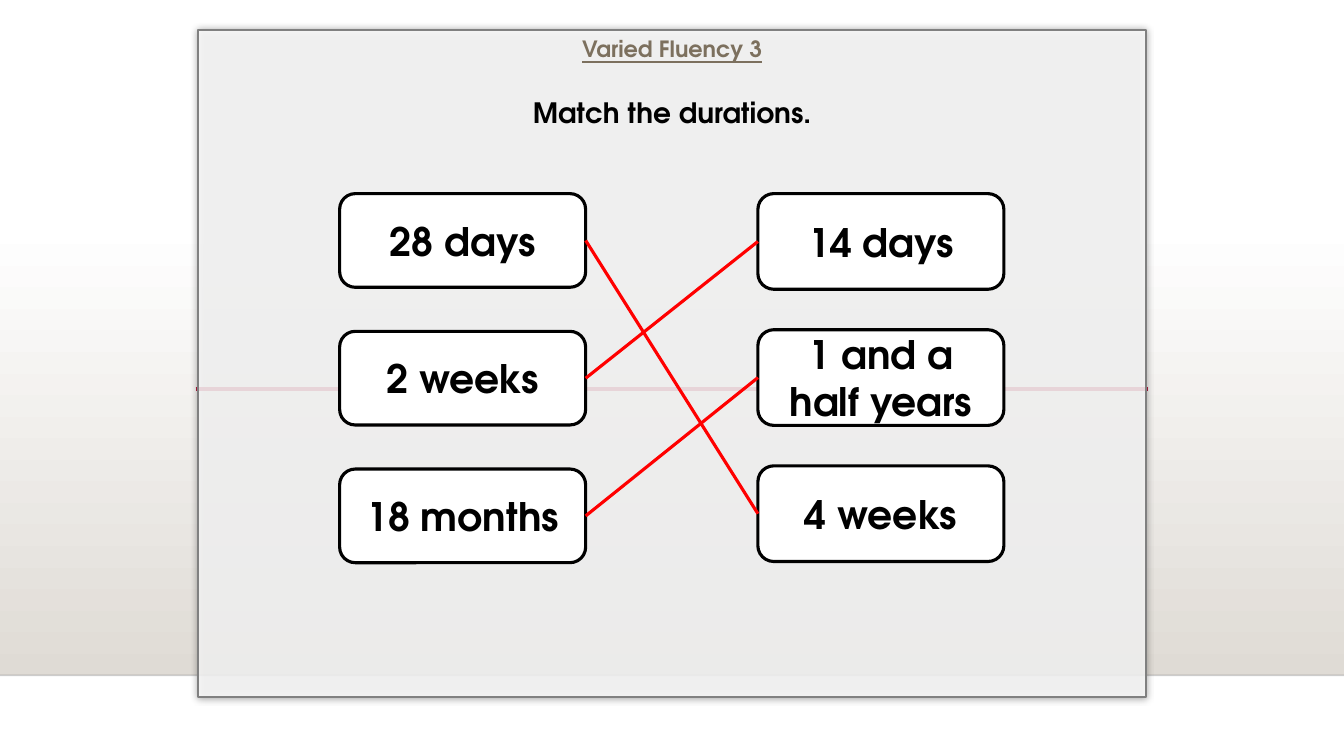
import dataclasses

import lxml.etree
import pptx
import pptx.dml.color
import pptx.enum.shapes
import pptx.enum.text
import pptx.oxml.ns
import pptx.util

Cm = pptx.util.Cm
Pt = pptx.util.Pt
qn = pptx.oxml.ns.qn
SHAPES = pptx.enum.shapes.MSO_SHAPE
MIDDLE = pptx.enum.text.MSO_ANCHOR.MIDDLE
CENTER = pptx.enum.text.PP_ALIGN.CENTER

COLORS = {
    "floor": "DFDBD5", "edge": "000001", "rule": "B71E42", "panel line": "808080",
    "title": "7C705E", "black": "000000", "white": "FFFFFF", "answer": "FF0000",
}
FONT = "TeX Gyre Adventor"
SLIDE_WIDTH, SLIDE_HEIGHT = 33.87, 19.05
PANEL_LEFT, PANEL_TOP, PANEL_WIDTH, PANEL_HEIGHT = 5.0, 0.76, 23.88, 16.81
CARD_WIDTH = 6.2
CARD_TOP = 4.88


@dataclasses.dataclass
class Column:
    left: float
    height: float
    pitch: float
    labels: list[str]


@dataclasses.dataclass
class Rule:
    left: float
    right: float
    y: float
    color: str
    width: float
    alpha: int


DURATIONS = Column(8.56, 2.36, 3.47, ["28 days", "2 weeks", "18 months"])
ANSWERS = Column(19.1, 2.41, 3.43, ["14 days", "1 and a half years", "4 weeks"])
MATCHES = {"28 days": "4 weeks", "2 weeks": "14 days", "18 months": "1 and a half years"}
RULES = [
    Rule(0, SLIDE_WIDTH, 17.02, "edge", 1, 20),
    Rule(4.93, 28.93, 9.8, "rule", 2.5, 100),
]


def rgb(name: str) -> pptx.dml.color.RGBColor:
    return pptx.dml.color.RGBColor.from_string(COLORS[name])


def set_alpha(color_element, percent: int) -> None:
    lxml.etree.SubElement(color_element, qn("a:alpha"), val=str(percent * 1000))


def add_box(page, kind, left: float, top: float, width: float, height: float):
    box = page.shapes.add_shape(kind, Cm(left), Cm(top), Cm(width), Cm(height))
    box.shadow.inherit = False
    return box


def style_box(box, line: str, width: float) -> None:
    box.fill.solid()
    box.fill.fore_color.rgb = rgb("white")
    box.line.color.rgb = rgb(line)
    box.line.width = Pt(width)


def add_line(page, left: float, right: float, y: float, color: str, width: float):
    line = page.shapes.add_connector(
        pptx.enum.shapes.MSO_CONNECTOR.STRAIGHT, Cm(left), Cm(y), Cm(right), Cm(y))
    line.line.color.rgb = rgb(color)
    line.line.width = Pt(width)
    lxml.etree.SubElement(line.element.spPr, qn("a:effectLst"))
    return line


def write(box, text: str, size: float, color: str, underline: bool = False) -> None:
    frame = box.text_frame
    frame.word_wrap = True
    frame.auto_size = pptx.enum.text.MSO_AUTO_SIZE.NONE
    frame.vertical_anchor = MIDDLE
    para = frame.paragraphs[0]
    para.alignment = CENTER
    para.space_before = Pt(0)
    span = para.add_run()
    span.text = text
    formats = {"name": FONT, "size": Pt(size), "bold": True, "underline": underline}
    for name, value in formats.items():
        setattr(span.font, name, value)
    span.font.color.rgb = rgb(color)


def draw_backdrop(page) -> None:
    # Shaded floor
    floor = add_box(page, SHAPES.RECTANGLE, 0, 5.61, SLIDE_WIDTH, 11.41)
    floor.line.fill.background()
    floor.fill.gradient()
    floor.fill.gradient_angle = 270
    for stop, color, position in zip(floor.fill.gradient_stops, ("white", "floor"), (0, 1)):
        stop.color.rgb = rgb(color)
        stop.position = position

    # Horizontal rules
    for rule in RULES:
        line = add_line(page, rule.left, rule.right, rule.y, rule.color, rule.width)
        if rule.alpha < 100:
            set_alpha(line.element.spPr.find(".//" + qn("a:srgbClr")), rule.alpha)

    # Translucent panel with a soft shadow
    panel = add_box(page, SHAPES.RECTANGLE, PANEL_LEFT, PANEL_TOP, PANEL_WIDTH, PANEL_HEIGHT)
    style_box(panel, "panel line", 1.25)
    properties = panel.element.spPr
    set_alpha(properties.find(qn("a:solidFill") + "/" + qn("a:srgbClr")), 82)
    shadow = lxml.etree.SubElement(
        properties.find(qn("a:effectLst")), qn("a:outerShdw"),
        blurRad=str(Pt(5)), dist="0", dir="0", algn="ctr", rotWithShape="0")
    set_alpha(lxml.etree.SubElement(shadow, qn("a:srgbClr"), val=COLORS["black"]), 40)


def place_heading(box, top: float, height: float) -> None:
    places = {"left": PANEL_LEFT, "top": top, "width": PANEL_WIDTH, "height": height}
    for name, value in places.items():
        setattr(box, name, Cm(value))
    box.element.getparent().append(box.element)


def draw_cards(page, column: Column) -> dict:
    cards = {}
    for row, label in enumerate(column.labels):
        card = add_box(page, SHAPES.ROUNDED_RECTANGLE, column.left,
                       CARD_TOP + row * column.pitch, CARD_WIDTH, column.height)
        style_box(card, "black", 2.25)
        write(card, label, 28, "black")
        cards[label] = card
    return cards


def main() -> None:
    deck = pptx.Presentation()
    deck.slide_width, deck.slide_height = Cm(SLIDE_WIDTH), Cm(SLIDE_HEIGHT)
    page = deck.slides.add_slide(deck.slide_layouts[1])
    draw_backdrop(page)

    # Title and instruction
    title, instruction = page.shapes.title, page.placeholders[1]
    place_heading(title, 0.76, 0.92)
    write(title, "Varied Fluency 3", 16, "title", underline=True)
    place_heading(instruction, 2.24, 1.16)
    settings = instruction.text_frame.paragraphs[0]._p.get_or_add_pPr()
    settings.set("marL", "0")
    settings.set("indent", "0")
    lxml.etree.SubElement(settings, qn("a:buNone"))
    write(instruction, "Match the durations.", 20, "black")

    # Cards and the lines that match them
    durations = draw_cards(page, DURATIONS)
    answers = draw_cards(page, ANSWERS)
    for duration, answer in MATCHES.items():
        match = add_line(page, 0, 0, 0, "answer", 2.25)
        match.begin_connect(durations[duration], 3)
        match.end_connect(answers[answer], 1)

    deck.save("out.pptx")


if __name__ == "__main__":
    main()
